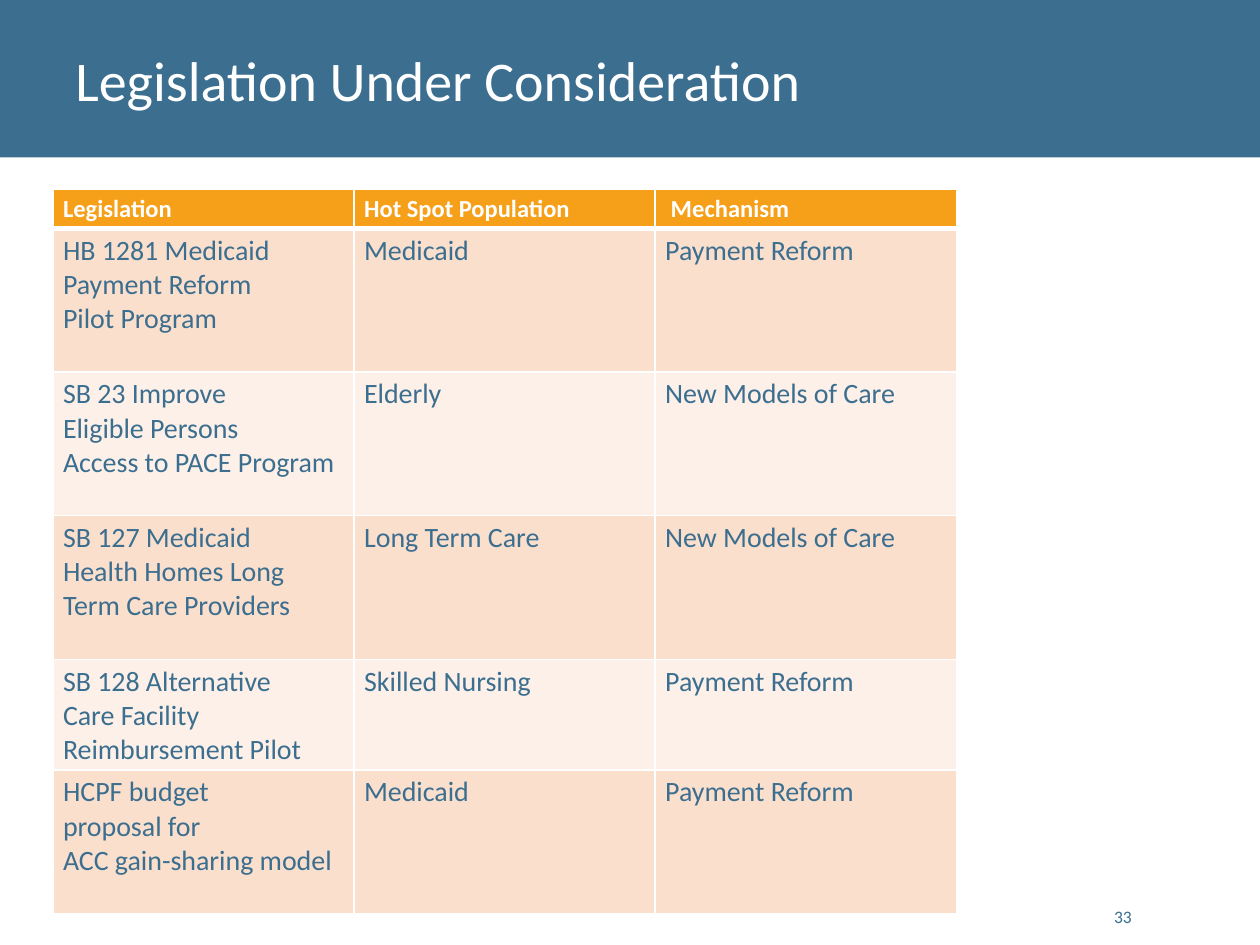
from typing import NamedTuple

from lxml import etree
from pptx import Presentation
from pptx.dml.color import RGBColor
from pptx.enum.shapes import MSO_SHAPE
from pptx.enum.text import MSO_ANCHOR, PP_ALIGN
from pptx.oxml.ns import qn
from pptx.util import Inches, Pt

RECTANGLE = MSO_SHAPE.RECTANGLE
MIDDLE, BOTTOM = MSO_ANCHOR.MIDDLE, MSO_ANCHOR.BOTTOM
LEFT, RIGHT = PP_ALIGN.LEFT, PP_ALIGN.RIGHT

FONT = "Calibri"
WHITE = RGBColor(0xFF, 0xFF, 0xFF)
BLUE = RGBColor(0x3B, 0x6E, 0x8F)
ORANGE = RGBColor(0xF6, 0xA0, 0x1A)
PEACH = RGBColor(0xFB, 0xDF, 0xCD)
PALE_PEACH = RGBColor(0xFD, 0xF0, 0xE8)

SLIDE_WIDTH, SLIDE_HEIGHT = Inches(10), Inches(7.5)
BANNER_HEIGHT = SLIDE_HEIGHT // 6
COLUMN_WIDTH = Inches(2.39)
HEADER_HEIGHT = Inches(0.31)
TALL_ROW, SHORT_ROW = Inches(1.14), Inches(0.88)


class Bill(NamedTuple):
    legislation: str
    population: str
    mechanism: str
    height: int = TALL_ROW


class TextStyle(NamedTuple):
    size: int
    color: RGBColor
    bold: bool = False


TITLE_STYLE = TextStyle(32, WHITE)
NUMBER_STYLE = TextStyle(10, BLUE)
HEADER_STYLE = TextStyle(14, WHITE, True)
BODY_STYLE = TextStyle(16, BLUE)

HEADERS = ("Legislation", "Hot Spot Population", " Mechanism")
BILLS = (
    Bill("HB 1281 Medicaid Payment Reform\nPilot Program", "Medicaid", "Payment Reform"),
    Bill("SB 23 Improve\nEligible Persons\nAccess to PACE Program", "Elderly",
         "New Models of Care"),
    Bill("SB 127 Medicaid\nHealth Homes Long Term Care Providers", "Long Term Care",
         "New Models of Care"),
    Bill("SB 128 Alternative\nCare Facility Reimbursement Pilot", "Skilled Nursing",
         "Payment Reform", SHORT_ROW),
    Bill("HCPF budget\nproposal for\nACC gain-sharing model", "Medicaid", "Payment Reform"),
)


def write(frame, text: str, style: TextStyle, align=LEFT) -> None:
    """Fill the first paragraph, with a line break at each newline."""
    frame.word_wrap = True
    paragraph = frame.paragraphs[0]
    paragraph.alignment = align
    for index, line in enumerate(text.split("\n")):
        if index:
            paragraph.add_line_break()
        run = paragraph.add_run()
        run.text = line
        run.font.name = FONT
        run.font.size = Pt(style.size)
        run.font.bold = style.bold
        run.font.color.rgb = style.color


def add_label(slide, box: tuple, text: str, style: TextStyle, anchor, align=LEFT) -> None:
    frame = slide.shapes.add_textbox(*box).text_frame
    frame.vertical_anchor = anchor
    write(frame, text, style, align)


def set_borders(cell, bottom_width: int) -> None:
    """White lines on all sides; they come before the fill in the cell."""
    properties = cell._tc.get_or_add_tcPr()
    sides = (("a:lnL", 1), ("a:lnR", 1), ("a:lnT", 1), ("a:lnB", bottom_width))
    for position, (side, width) in enumerate(sides):
        line = etree.Element(qn(side), w=str(Pt(width)))
        fill = etree.SubElement(line, qn("a:solidFill"))
        etree.SubElement(fill, qn("a:srgbClr"), val=str(WHITE))
        properties.insert(position, line)


def fill_row(table, row: int, texts: tuple, style: TextStyle, fill: RGBColor,
             height: int, bottom_width: int = 1) -> None:
    table.rows[row].height = height
    for column, text in enumerate(texts):
        cell = table.cell(row, column)
        cell.margin_left = cell.margin_right = Inches(0.08)
        cell.margin_top = cell.margin_bottom = Inches(0.04)
        cell.fill.solid()
        cell.fill.fore_color.rgb = fill
        set_borders(cell, bottom_width)
        write(cell.text_frame, text, style)


def add_bill_table(slide) -> None:
    height = HEADER_HEIGHT + sum(bill.height for bill in BILLS)
    table = slide.shapes.add_table(
        len(BILLS) + 1, len(HEADERS), Inches(0.42), Inches(1.5),
        COLUMN_WIDTH * len(HEADERS), height).table
    table.first_row = table.horz_banding = False
    for column in table.columns:
        column.width = COLUMN_WIDTH
    fill_row(table, 0, HEADERS, HEADER_STYLE, ORANGE, HEADER_HEIGHT, 3)
    for row, bill in enumerate(BILLS, start=1):
        fill_row(table, row, bill[:3], BODY_STYLE,
                 PEACH if row % 2 else PALE_PEACH, bill.height)


def main() -> None:
    deck = Presentation()
    deck.slide_width, deck.slide_height = SLIDE_WIDTH, SLIDE_HEIGHT
    slide = deck.slides.add_slide(deck.slide_layouts[6])

    # Title banner
    banner = slide.shapes.add_shape(RECTANGLE, 0, 0, SLIDE_WIDTH, BANNER_HEIGHT)
    banner.shadow.inherit = False
    banner.fill.solid()
    banner.fill.fore_color.rgb = BLUE
    banner.line.fill.background()
    add_label(slide, (SLIDE_WIDTH // 20, 0, SLIDE_WIDTH * 9 // 10, BANNER_HEIGHT),
              "Legislation Under Consideration", TITLE_STYLE, MIDDLE)

    # Slide number
    add_label(slide, (Inches(8.68), Inches(7.01), Inches(0.4), Inches(0.4)),
              "33", NUMBER_STYLE, BOTTOM, RIGHT)

    # Bills
    add_bill_table(slide)
    deck.save("out.pptx")


if __name__ == "__main__":
    main()
